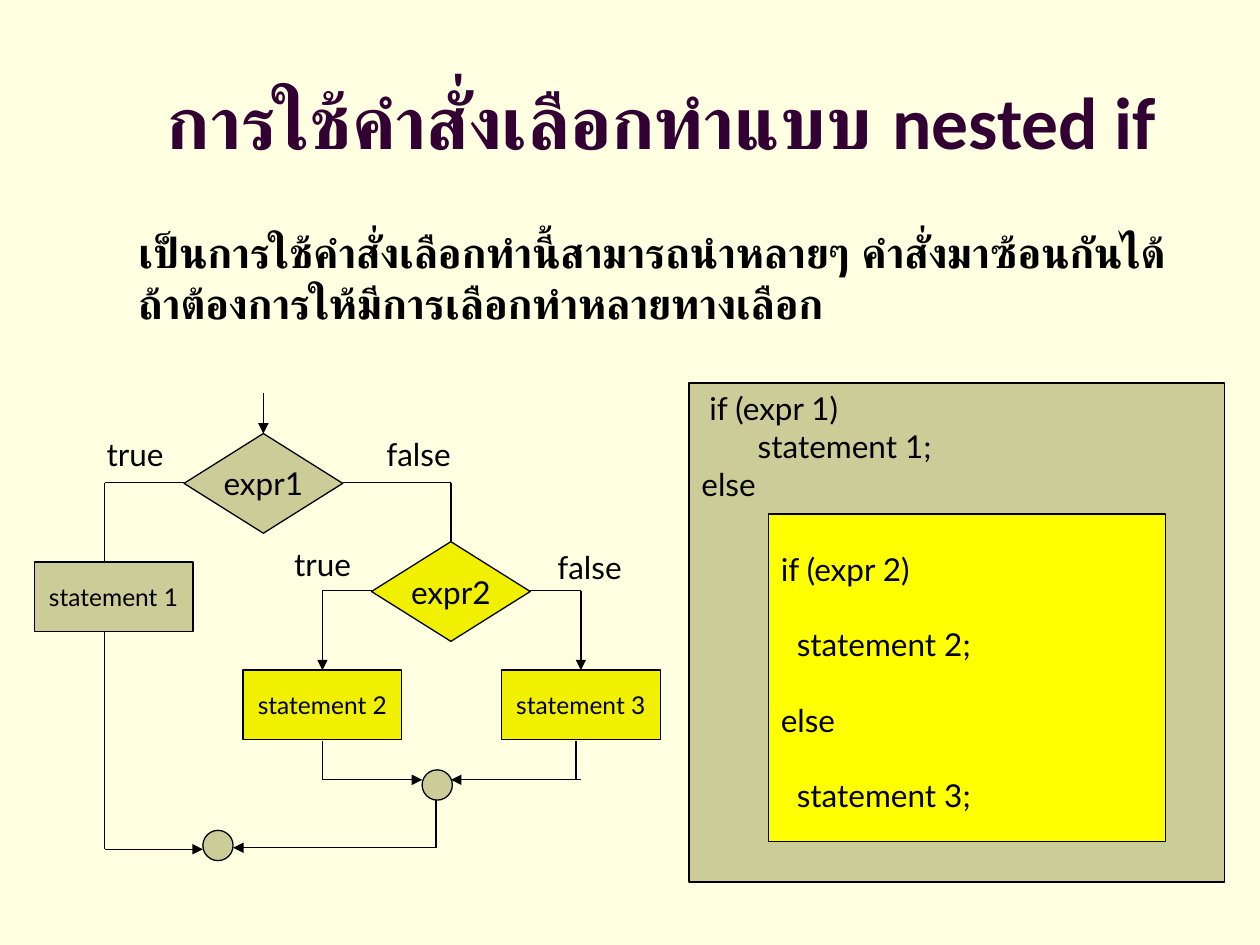
from dataclasses import dataclass
from itertools import pairwise

from lxml import etree
from pptx import Presentation
from pptx.dml.color import RGBColor
from pptx.enum.shapes import MSO_CONNECTOR, MSO_SHAPE
from pptx.enum.text import MSO_ANCHOR, PP_ALIGN
from pptx.oxml.ns import qn
from pptx.util import Cm, Pt

CREAM = RGBColor(0xFF, 0xFF, 0xE1)
PLUM = RGBColor(0x33, 0x00, 0x33)
BLACK = RGBColor(0x00, 0x00, 0x00)
KHAKI = RGBColor(0xCC, 0xCC, 0x99)
GOLD = RGBColor(0xF0, 0xF0, 0x00)
YELLOW = RGBColor(0xFF, 0xFF, 0x00)

DIAMOND = MSO_SHAPE.DIAMOND
RECTANGLE = MSO_SHAPE.RECTANGLE
JOIN = MSO_SHAPE.FLOWCHART_CONNECTOR
STRAIGHT = MSO_CONNECTOR.STRAIGHT
LEFT, CENTER = PP_ALIGN.LEFT, PP_ALIGN.CENTER
TOP, MIDDLE = MSO_ANCHOR.TOP, MSO_ANCHOR.MIDDLE

HEADING_FONT, DIAGRAM_FONT = "Calibri", "Lato"
LINE_WIDTH = Pt(0.75)
NODE_WIDTH = 3.2
DIAMOND_HEIGHT, STATEMENT_HEIGHT, JOIN_SIZE = 2.01, 1.4, 0.61


@dataclass(frozen=True)
class Area:
    """Left, top, width and height in centimetres."""
    left: float
    top: float
    width: float
    height: float

    def lengths(self) -> tuple:
        return Cm(self.left), Cm(self.top), Cm(self.width), Cm(self.height)


@dataclass(frozen=True)
class Style:
    size: float
    font: str = DIAGRAM_FONT
    color: RGBColor = BLACK
    bold: bool = False
    align: PP_ALIGN = LEFT
    anchor: MSO_ANCHOR = TOP
    wrap: bool = True
    gap: float = 0


@dataclass(frozen=True)
class Node:
    kind: MSO_SHAPE
    area: Area
    fill: RGBColor
    text: str = ""
    size: float = 18


@dataclass(frozen=True)
class Label:
    text: str
    left: float
    top: float
    align: PP_ALIGN


@dataclass(frozen=True)
class Route:
    """Straight segments through the points, with an optional arrow at the end."""
    points: tuple
    arrow: bool = False


def decision(left: float, top: float, fill: RGBColor, text: str) -> Node:
    return Node(DIAMOND, Area(left, top, NODE_WIDTH, DIAMOND_HEIGHT), fill, text)


def statement(left: float, top: float, fill: RGBColor, text: str) -> Node:
    return Node(RECTANGLE, Area(left, top, NODE_WIDTH, STATEMENT_HEIGHT), fill, text, 14)


def join(left: float, top: float) -> Node:
    return Node(JOIN, Area(left, top, JOIN_SIZE, JOIN_SIZE), KHAKI)


NODES = (
    decision(3.71, 8.74, KHAKI, "expr1"),
    decision(7.49, 10.92, GOLD, "expr2"),
    statement(0.69, 11.33, KHAKI, "statement 1"),
    statement(4.9, 13.51, GOLD, "statement 2"),
    statement(10.11, 13.51, GOLD, "statement 3"),
    join(8.51, 15.52),
    join(4.09, 16.74),
)

ROUTES = (
    Route(((5.31, 7.92), (5.31, 8.74)), True),
    Route(((6.91, 9.73), (9.09, 9.73), (9.09, 10.92))),
    Route(((3.71, 9.73), (2.11, 9.73), (2.11, 11.33))),
    Route(((7.49, 11.91), (6.5, 11.91), (6.5, 13.51)), True),
    Route(((10.69, 11.91), (11.71, 11.91), (11.71, 13.51)), True),
    Route(((6.5, 14.94), (6.5, 15.72), (8.51, 15.72)), True),
    Route(((11.61, 14.94), (11.61, 15.72))),
    Route(((11.71, 15.72), (9.09, 15.72)), True),
    Route(((2.11, 12.73), (2.11, 17.12), (4.09, 17.12)), True),
    Route(((8.79, 16.13), (8.79, 17.09), (4.7, 17.09)), True),
)

LABELS = (
    Label("true", 1.9, 8.64, LEFT),
    Label("false", 7.54, 8.64, LEFT),
    Label("true", 5.31, 10.87, CENTER),
    Label("false", 10.69, 10.92, CENTER),
)

TITLE = "การใช้คำสั่งเลือกทำแบบ nested if"
BODY = ("เป็นการใช้คำสั่งเลือกทำนี้สามารถนำหลายๆ คำสั่งมาซ้อนกันได้ "
        "ถ้าต้องการให้มีการเลือกทำหลายทางเลือก")
OUTER_CODE = " if (expr 1)\n       statement 1;\nelse"
INNER_CODE = "if (expr 2)\n  statement 2;\nelse\n  statement 3;"


def write(box, text: str, style: Style) -> None:
    frame = box.text_frame
    frame.text = text
    frame.word_wrap = style.wrap
    frame.vertical_anchor = style.anchor
    for index, para in enumerate(frame.paragraphs):
        para.alignment = style.align
        if index and style.gap:
            para.space_before = Pt(style.gap)
        for span in para.runs:
            span.font.name = style.font
            span.font.size = Pt(style.size)
            span.font.bold = style.bold
            span.font.color.rgb = style.color


def add_text(page, area: Area, text: str, style: Style) -> None:
    write(page.shapes.add_textbox(*area.lengths()), text, style)


def add_outlined(page, kind: MSO_SHAPE, area: Area, fill: RGBColor):
    shape = page.shapes.add_shape(kind, *area.lengths())
    shape.shadow.inherit = False
    shape.fill.solid()
    shape.fill.fore_color.rgb = fill
    shape.line.color.rgb = BLACK
    shape.line.width = LINE_WIDTH
    return shape


def add_node(page, node: Node) -> None:
    shape = add_outlined(page, node.kind, node.area, node.fill)
    if node.text:
        write(shape, node.text, Style(node.size, align=CENTER, anchor=MIDDLE, wrap=False))


def add_route(page, route: Route) -> None:
    for start, end in pairwise(route.points):
        line = page.shapes.add_connector(STRAIGHT, *map(Cm, start + end))
        line.line.color.rgb = BLACK
        line.line.width = LINE_WIDTH
        if route.arrow and end == route.points[-1]:
            outline = line.line._get_or_add_ln()
            etree.SubElement(outline, qn("a:tailEnd"), type="triangle")
        etree.SubElement(line._element.spPr, qn("a:effectLst"))


def main() -> None:
    deck = Presentation()
    deck.slide_width, deck.slide_height = Cm(25.4), Cm(19.05)
    page = deck.slides.add_slide(deck.slide_layouts[6])
    page.background.fill.solid()
    page.background.fill.fore_color.rgb = CREAM

    add_text(page, Area(2.54, 0.84, 21.59, 3.18), TITLE,
             Style(42, HEADING_FONT, PLUM, bold=True, align=CENTER, anchor=MIDDLE))
    add_text(page, Area(2.54, 4.45, 21.59, 12.57), BODY,
             Style(24, HEADING_FONT, bold=True))

    for node in NODES:
        add_node(page, node)
    for route in ROUTES:
        add_route(page, route)
    for label in LABELS:
        add_text(page, Area(label.left, label.top, 2.39, 1.02), label.text,
                 Style(18, align=label.align))

    outer = add_outlined(page, RECTANGLE, Area(13.89, 7.72, 10.8, 10.06), KHAKI)
    write(outer, OUTER_CODE, Style(18))
    inner = add_outlined(page, RECTANGLE, Area(15.49, 10.36, 8, 6.6), YELLOW)
    write(inner, INNER_CODE, Style(18, gap=21.6))
    inner.text_frame.margin_top = Cm(0.72)

    deck.save("out.pptx")


if __name__ == "__main__":
    main()
